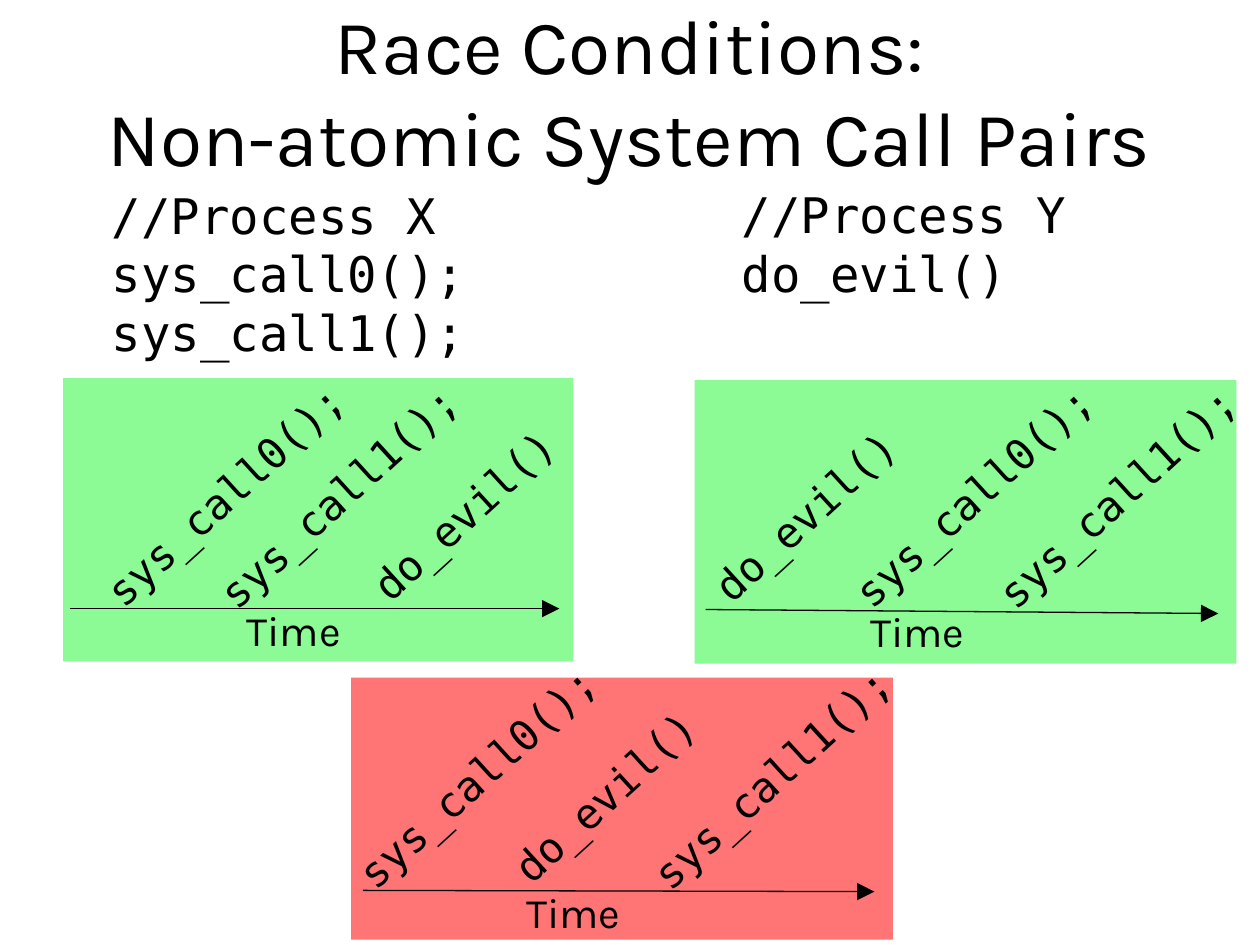
"""Build a slide on race conditions between non-atomic system calls."""
from dataclasses import dataclass

import lxml.etree
import pptx
import pptx.dml.color
import pptx.enum.dml
import pptx.enum.shapes
import pptx.enum.text
import pptx.oxml.ns
import pptx.util

Pt = pptx.util.Pt
Align = pptx.enum.text.PP_ALIGN


@dataclass(frozen=True)
class Theme:
    ink: str = "000000"
    safe: str = "35F948"
    unsafe: str = "FF0000"
    safe_opacity: int = 57
    unsafe_opacity: int = 54
    prose_font: str = "Karla"
    code_font: str = "DejaVu Sans Mono"
    title_size: int = 44
    code_size: int = 28
    label_size: int = 24


@dataclass(frozen=True)
class Call:
    text: str
    width: float
    rise: float


@dataclass(frozen=True)
class Timeline:
    frame: tuple
    axis: tuple
    time_left: float
    calls: tuple
    safe: bool = True


THEME = Theme()
LABEL_HEIGHT = 36
TIME_WIDTH = 100.8
TIME_RISE = 6
CALL_ANGLE = 317.6
FIRST = Call("sys_call0();", 187.2, 82.8)
SECOND = Call("sys_call1();", 187.2, 82.1)
EVIL = Call("do_evil()", 154.8, 71.8)

LISTINGS = (
    ((56.9, 102.2, 249.1, 108.7), ("//Process X", "sys_call0();", "sys_call1();")),
    ((416.9, 102.2, 249.1, 74.9), ("//Process Y", "do_evil()")),
)
TIMELINES = (
    Timeline((36, 216, 291.6, 162), (40.3, 347.8, 319.7, 347.8), 117.4,
             ((FIRST, 34.6), (SECOND, 99.4), (EVIL, 187.2))),
    Timeline((396.9, 217.2, 309.6, 162), (403.2, 348.3, 696.2, 350.6), 473.8,
             ((FIRST, 462.2), (SECOND, 544.3), (EVIL, 382.3))),
    Timeline((200.7, 387.2, 309.6, 149.8), (207.4, 508.8, 499.7, 509.5), 277.2,
             ((FIRST, 178.6), (SECOND, 347), (EVIL, 267.8)), safe=False),
)


def points(values):
    """Turn plain numbers into lengths in points."""
    return [Pt(value) for value in values]


def color(code):
    """Turn a hex code into a colour."""
    return pptx.dml.color.RGBColor.from_string(code)


def add_child(parent, tag, **attributes):
    """Append a drawing element to a parent element."""
    return lxml.etree.SubElement(parent, pptx.oxml.ns.qn(tag), attributes)


def write_lines(frame, lines, *, font, size, align=Align.LEFT):
    """Fill a text frame with one formatted paragraph per line."""
    for index, line in enumerate(lines):
        para = frame.add_paragraph() if index else frame.paragraphs[0]
        para.text = line
        para.alignment = align
        para.font.name = font
        para.font.size = Pt(size)
        para.font.color.rgb = color(THEME.ink)


def add_text(shapes, area, lines, *, side_margin=7.2, angle=0, **text_format):
    """Add a text box with formatted lines."""
    box = shapes.add_textbox(*points(area))
    box.rotation = angle
    frame = box.text_frame
    frame.word_wrap = True
    frame.margin_left = frame.margin_right = Pt(side_margin)
    write_lines(frame, lines, **text_format)


def add_title(page, text):
    """Place and fill the title placeholder."""
    title = page.shapes.title
    title.left, title.top, title.width, title.height = points((54, 0, 612, 102.2))
    title.text_frame.auto_size = pptx.enum.text.MSO_AUTO_SIZE.NONE
    title.text_frame.vertical_anchor = pptx.enum.text.MSO_ANCHOR.MIDDLE
    write_lines(title.text_frame, [text], font=THEME.prose_font,
                size=THEME.title_size, align=Align.CENTER)


def add_panel(shapes, area, fill, opacity):
    """Add a borderless translucent rectangle."""
    panel = shapes.add_shape(pptx.enum.shapes.MSO_SHAPE.RECTANGLE, *points(area))
    panel.shadow.inherit = False
    panel.fill.solid()
    panel.fill.fore_color.rgb = color(fill)
    panel.line.fill.background()
    swatch = panel.fill._xPr.find(".//" + pptx.oxml.ns.qn("a:srgbClr"))
    add_child(swatch, "a:alpha", val=str(opacity * 1000))


def add_arrow(shapes, ends):
    """Add a thin line with a large arrowhead at its end."""
    arrow = shapes.add_connector(
        pptx.enum.shapes.MSO_CONNECTOR.STRAIGHT, *points(ends))
    arrow.line.color.rgb = color(THEME.ink)
    arrow.line.width = Pt(0.75)
    add_child(arrow.line._get_or_add_ln(), "a:tailEnd",
              type="triangle", w="lg", len="lg")
    add_child(arrow._element.spPr, "a:effectLst")


def add_timeline(page, timeline):
    """Add a grouped panel showing one order of the calls."""
    shapes = page.shapes.add_group_shape().shapes
    if timeline.safe:
        add_panel(shapes, timeline.frame, THEME.safe, THEME.safe_opacity)
    else:
        add_panel(shapes, timeline.frame, THEME.unsafe, THEME.unsafe_opacity)
    add_arrow(shapes, timeline.axis)
    axis_top = timeline.axis[1]
    add_text(shapes, (timeline.time_left, axis_top - TIME_RISE, TIME_WIDTH, LABEL_HEIGHT),
             ["Time"], font=THEME.prose_font, size=THEME.label_size,
             align=Align.CENTER)
    for call, left in timeline.calls:
        add_text(shapes, (left, axis_top - call.rise, call.width, LABEL_HEIGHT),
                 [call.text], side_margin=0, angle=CALL_ANGLE, font=THEME.code_font,
                 size=THEME.label_size, align=Align.CENTER)


def main():
    """Build and save the deck."""
    deck = pptx.Presentation()
    deck.slide_width, deck.slide_height = points((720, 540))
    page = deck.slides.add_slide(deck.slide_layouts.get_by_name("Title Only"))
    add_title(page, "Race Conditions:\vNon-atomic System Call Pairs")
    for area, lines in LISTINGS:
        add_text(page.shapes, area, lines, font=THEME.code_font,
                 size=THEME.code_size)
    for timeline in TIMELINES:
        add_timeline(page, timeline)
    deck.save("out.pptx")


if __name__ == "__main__":
    main()
